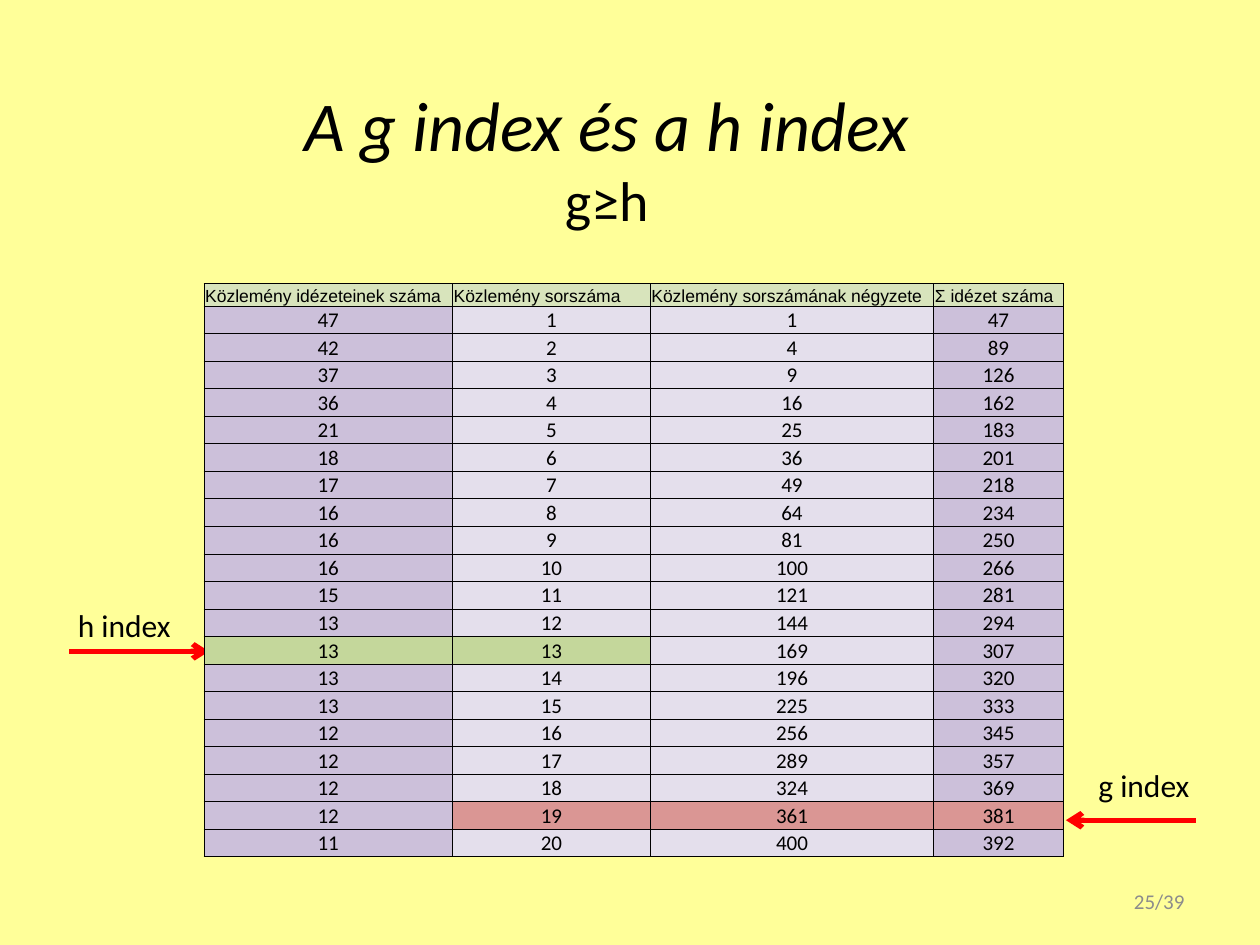
"""Build a slide comparing the g index and the h index in a citation table."""
from itertools import accumulate

from lxml import etree
from pptx import Presentation
from pptx.dml.color import RGBColor
from pptx.enum.shapes import MSO_CONNECTOR
from pptx.enum.text import MSO_ANCHOR, MSO_AUTO_SIZE, PP_ALIGN
from pptx.oxml.ns import qn
from pptx.util import Pt

LEFT, CENTER, RIGHT = PP_ALIGN.LEFT, PP_ALIGN.CENTER, PP_ALIGN.RIGHT
TOP, MIDDLE, BOTTOM = MSO_ANCHOR.TOP, MSO_ANCHOR.MIDDLE, MSO_ANCHOR.BOTTOM
GROW = MSO_AUTO_SIZE.SHAPE_TO_FIT_TEXT
STRAIGHT = MSO_CONNECTOR.STRAIGHT

COLORS = {
    "page": "FFFF99", "text": "000000", "number": "8C8C8C", "arrow": "FF0000",
    "header": "D8E4BC", "outer": "CCC0DA", "inner": "E4DFEC",
    "h": "C4D79B", "g": "DA9694",
}
HEADERS = ["Közlemény idézeteinek száma", "Közlemény sorszáma",
           "Közlemény sorszámának négyzete", "Σ idézet száma"]
CITATIONS = [47, 42, 37, 36, 21, 18, 17, 16, 16, 16,
             15, 13, 13, 13, 13, 12, 12, 12, 12, 11]
COLUMN_COLORS = ["outer", "inner", "inner", "outer"]
HIGHLIGHTS = {13: ("h", (0, 1)), 19: ("g", (1, 2, 3))}
COLUMN_WIDTHS = [142, 113, 162, 74]
TABLE_LEFT, TABLE_TOP = 116.6, 162.2
HEADER_HEIGHT, ROW_HEIGHT = 12.7, 15.74

TITLE = [("A g index és a h index", 40, True, LEFT), ("g≥h", 32, False, CENTER)]
TITLE_BOX = (167, 43.2, 374.4, 94.3)
LABELS = [("h index", (37.4, 342.7, 68.4, 28.8)), ("g index", (620.6, 434.2, 67, 28.8))]
ARROWS = [(39.6, 119.5, 372.2), (683.3, 609.1, 468.7)]
PAGE_NUMBER = ("25/39", (516.2, 500.4, 167.8, 28.8))


def color(name):
    return RGBColor.from_string(COLORS[name])


def style(para, size, align=LEFT, name="Calibri", tint="text", italic=False):
    para.alignment = align
    para.font.name, para.font.size, para.font.italic = name, Pt(size), italic
    para.font.color.rgb = color(tint)


def add_text(page, bounds, lines, tint="text", wrap=False, anchor=TOP):
    frame = page.shapes.add_textbox(*map(Pt, bounds)).text_frame
    frame.word_wrap, frame.vertical_anchor = wrap, anchor
    if not wrap:
        frame.auto_size = GROW
    for index, (text, size, italic, align) in enumerate(lines):
        para = frame.add_paragraph() if index else frame.paragraphs[0]
        para.text = text
        style(para, size, align, tint=tint, italic=italic)


def add_arrow(page, start, end, y):
    arrow = page.shapes.add_connector(STRAIGHT, Pt(start), Pt(y), Pt(end), Pt(y))
    arrow.line.color.rgb, arrow.line.width = color("arrow"), Pt(3)
    etree.SubElement(arrow.line._get_or_add_ln(), qn("a:tailEnd"), type="arrow")
    etree.SubElement(arrow._element.spPr, qn("a:effectLst"))


def add_borders(cell):
    properties = cell._tc.get_or_add_tcPr()
    for index, side in enumerate(("lnL", "lnR", "lnT", "lnB")):
        line = etree.Element(qn("a:" + side), w=str(Pt(0.5)))
        fill = etree.SubElement(line, qn("a:solidFill"))
        etree.SubElement(fill, qn("a:srgbClr"), val=COLORS["text"])
        properties.insert(index, line)


def fill_cell(cell, text, tint, header):
    cell.text = str(text)
    cell.margin_left = cell.margin_right = cell.margin_top = Pt(0.7)
    cell.margin_bottom = 0
    cell.vertical_anchor = BOTTOM if header else MIDDLE
    cell.fill.solid()
    cell.fill.fore_color.rgb = color(tint)
    para = cell.text_frame.paragraphs[0]
    if header:
        style(para, 10, name="Arial")
    else:
        style(para, 12, CENTER)
    add_borders(cell)


def add_citation_table(page):
    rows = [HEADERS] + [
        (count, rank, rank ** 2, total)
        for rank, (count, total) in enumerate(zip(CITATIONS, accumulate(CITATIONS)), 1)]
    heights = [HEADER_HEIGHT] + [ROW_HEIGHT] * len(CITATIONS)
    table = page.shapes.add_table(
        len(rows), len(HEADERS), Pt(TABLE_LEFT), Pt(TABLE_TOP),
        Pt(sum(COLUMN_WIDTHS)), Pt(sum(heights))).table
    for column, width in zip(table.columns, COLUMN_WIDTHS):
        column.width = Pt(width)
    for rank, (values, height) in enumerate(zip(rows, heights)):
        table.rows[rank].height = Pt(height)
        mark, marked = HIGHLIGHTS.get(rank, (None, ()))
        for index, value in enumerate(values):
            tint = mark if index in marked else COLUMN_COLORS[index]
            fill_cell(table.cell(rank, index), value, tint if rank else "header", rank == 0)


def main():
    deck = Presentation()
    deck.slide_width, deck.slide_height = Pt(720), Pt(540)
    page = deck.slides.add_slide(deck.slide_layouts[6])
    page.background.fill.solid()
    page.background.fill.fore_color.rgb = color("page")
    add_text(page, TITLE_BOX, TITLE)
    for arrow in ARROWS:
        add_arrow(page, *arrow)
    for text, bounds in LABELS:
        add_text(page, bounds, [(text, 18, False, LEFT)])
    add_citation_table(page)
    number, bounds = PAGE_NUMBER
    add_text(page, bounds, [(number, 12, False, RIGHT)], "number", True, MIDDLE)
    deck.save("out.pptx")


if __name__ == "__main__":
    main()
